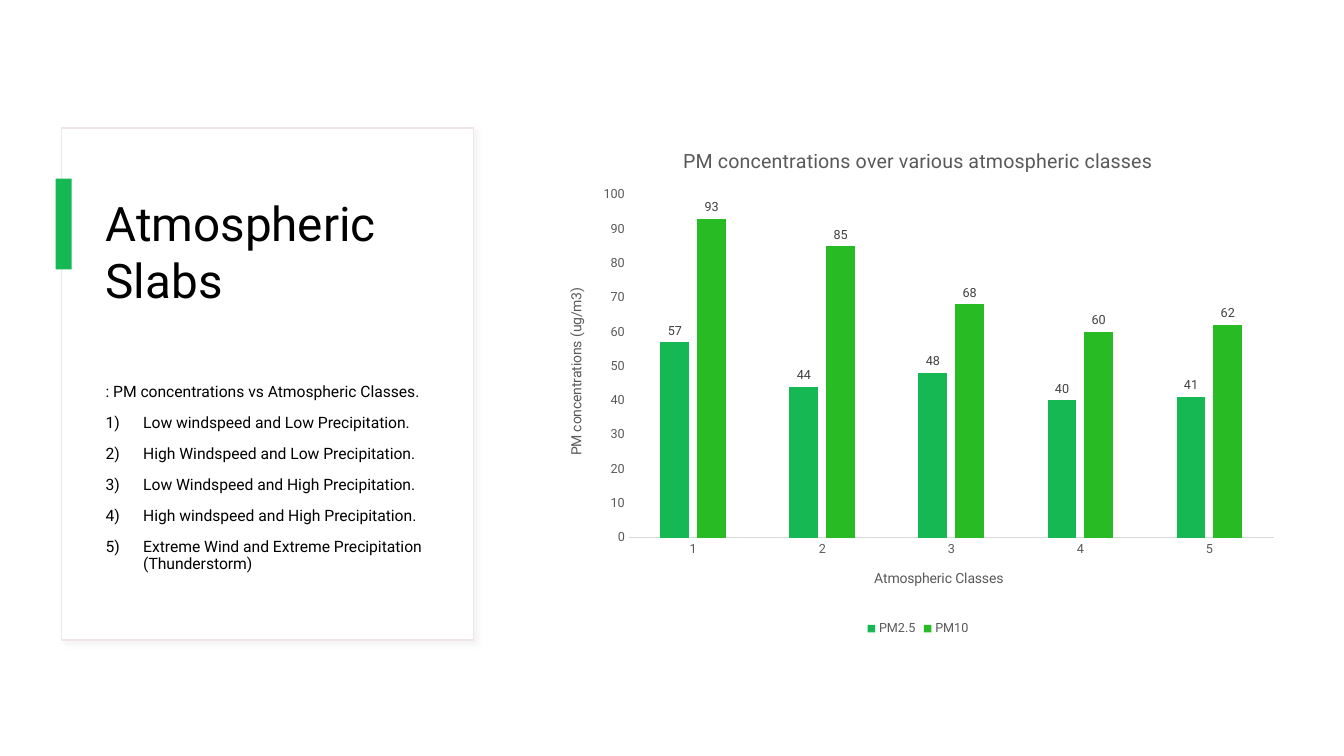
from lxml.etree import SubElement
from pptx import Presentation
from pptx.chart.data import CategoryChartData
from pptx.dml.color import RGBColor
from pptx.enum.chart import (XL_CHART_TYPE as ChartType, XL_LABEL_POSITION as LabelPosition,
                             XL_LEGEND_POSITION as LegendPosition, XL_TICK_MARK as TickMark)
from pptx.enum.shapes import MSO_SHAPE as ShapeKind
from pptx.enum.text import MSO_ANCHOR as Anchor, MSO_AUTO_SIZE as AutoSize, PP_ALIGN as Align
from pptx.oxml import parse_xml
from pptx.oxml.ns import nsdecls, qn
from pptx.util import Cm, Pt

FONT = "Roboto"
BLACK = RGBColor(0x00, 0x00, 0x00)
WHITE = RGBColor(0xFF, 0xFF, 0xFF)
GREEN = RGBColor(0x16, 0xB8, 0x54)
LIGHT_GREEN = RGBColor(0x29, 0xBB, 0x23)
CARD_LINE = RGBColor(0xF0, 0xE5, 0xE5)
AXIS_LINE = RGBColor(0xD9, 0xD9, 0xD9)
CHART_TEXT = RGBColor(0x59, 0x59, 0x59)
LABEL_TEXT = RGBColor(0x40, 0x40, 0x40)

INTRO = ": PM concentrations vs Atmospheric Classes."
CLASSES = [
    "Low windspeed and Low Precipitation.",
    "High Windspeed and Low Precipitation.",
    "Low Windspeed and High Precipitation.",
    "High windspeed and High Precipitation.",
    "Extreme Wind and Extreme Precipitation (Thunderstorm)",
]
SERIES = {
    "PM2.5": ([57, 44, 48, 40, 41], GREEN),
    "PM10": ([93, 85, 68, 60, 62], LIGHT_GREEN),
}
PLOT_LAYOUT = {"x": 0.11, "y": 0.13, "w": 0.87, "h": 0.67}


def apply(target, formats):
    for name, value in formats.items():
        setattr(target, name, value)


def format_font(font, size, color):
    apply(font, {"name": FONT, "size": Pt(size), "bold": False})
    font.color.rgb = color


def place(shape, left, top, width, height):
    apply(shape, {"left": Cm(left), "top": Cm(top), "width": Cm(width), "height": Cm(height)})


def add_box(slide, box, fill, line=None):
    shape = slide.shapes.add_shape(ShapeKind.RECTANGLE, *map(Cm, box))
    shape.shadow.inherit = False
    shape.fill.solid()
    shape.fill.fore_color.rgb = fill
    if line is None:
        shape.line.fill.background()
    else:
        shape.line.color.rgb = line
        shape.line.width = Pt(1)
    return shape


def add_soft_shadow(shape):
    effects = shape._element.spPr.find(qn("a:effectLst"))
    effects.append(parse_xml(
        f'<a:outerShdw {nsdecls("a")} blurRad="{Pt(4)}" dist="{Pt(3)}" dir="2700000" '
        'algn="tl" rotWithShape="0"><a:srgbClr val="D9D9D9"><a:alpha val="30000"/>'
        '</a:srgbClr></a:outerShdw>'))


def format_title(slide):
    title = slide.shapes.title
    place(title, 2.41, 4.75, 8.61, 4.75)
    frame = title.text_frame
    frame.text = "Atmospheric Slabs"
    apply(frame, {"word_wrap": True, "auto_size": AutoSize.NONE, "vertical_anchor": Anchor.TOP})
    paragraph = frame.paragraphs[0]
    paragraph.alignment = Align.LEFT
    format_font(paragraph.runs[0].font, 34, BLACK)
    # Bring the title in front of the card
    slide.shapes._spTree.append(title._element)


def add_class_list(slide):
    frame = slide.shapes.add_textbox(*map(Cm, (2.41, 9.55, 8.61, 5.72))).text_frame
    frame.word_wrap = True
    frame.text = "\n".join([INTRO, *CLASSES])
    for index, paragraph in enumerate(frame.paragraphs):
        apply(paragraph, {"line_spacing": 0.9, "space_before": Pt(10)})
        format_font(paragraph.runs[0].font, 11.2, BLACK)
        if index:
            properties = paragraph._p.get_or_add_pPr()
            properties.set("marL", str(Cm(0.95)))
            properties.set("indent", str(-Cm(0.95)))
            SubElement(properties, qn("a:buAutoNum")).set("type", "arabicParenR")


def set_heading(owner, text, size):
    """Give a chart or an axis its title."""
    heading = owner.chart_title if hasattr(owner, "chart_title") else owner.axis_title
    heading.text_frame.text = text
    format_font(heading.text_frame.paragraphs[0].runs[0].font, size, CHART_TEXT)


def format_axis(axis, text):
    apply(axis, {"has_major_gridlines": False, "major_tick_mark": TickMark.NONE,
                 "minor_tick_mark": TickMark.NONE})
    format_font(axis.tick_labels.font, 9, CHART_TEXT)
    set_heading(axis, text, 10)


def fix_plot_area(chart):
    plot_area = chart._chartSpace.chart.plotArea
    for old in plot_area.findall(qn("c:layout")):
        plot_area.remove(old)
    sizes = "".join(f'<c:{key} val="{value}"/>' for key, value in PLOT_LAYOUT.items())
    plot_area.insert(0, parse_xml(
        f'<c:layout {nsdecls("c")}><c:manualLayout><c:layoutTarget val="inner"/>'
        f'<c:xMode val="edge"/><c:yMode val="edge"/>{sizes}</c:manualLayout></c:layout>'))


def add_concentration_chart(slide):
    data = CategoryChartData()
    data.categories = ["1", "2", "3", "4", "5"]
    for name, (values, _) in SERIES.items():
        data.add_series(name, values)
    chart = slide.shapes.add_chart(
        ChartType.COLUMN_CLUSTERED, *map(Cm, (13.79, 3.23, 18.69, 12.9)), data).chart
    format_font(chart.font, 10, BLACK)
    set_heading(chart, "PM concentrations over various atmospheric classes", 14)

    # Axes
    format_axis(chart.category_axis, "Atmospheric Classes")
    chart.category_axis.format.line.color.rgb = AXIS_LINE
    chart.category_axis.format.line.width = Pt(0.75)
    format_axis(chart.value_axis, "PM concentrations (ug/m3)")
    chart.value_axis.format.line.fill.background()
    apply(chart.value_axis, {"minimum_scale": 0, "maximum_scale": 100, "major_unit": 10})

    # Columns and their labels
    plot = chart.plots[0]
    apply(plot, {"gap_width": 219, "overlap": -27, "vary_by_categories": False})
    for series, (_, color) in zip(plot.series, SERIES.values()):
        series.format.fill.solid()
        series.format.fill.fore_color.rgb = color
        apply(series.data_labels, {"show_value": True, "position": LabelPosition.OUTSIDE_END})
        format_font(series.data_labels.font, 9, LABEL_TEXT)

    # Legend
    chart.has_legend = True
    apply(chart.legend, {"position": LegendPosition.BOTTOM, "include_in_layout": False})
    format_font(chart.legend.font, 9, CHART_TEXT)
    fix_plot_area(chart)


def main():
    presentation = Presentation()
    apply(presentation, {"slide_width": Cm(33.87), "slide_height": Cm(19.05)})
    slide = presentation.slides.add_slide(presentation.slide_layouts[5])

    # Card with its accent bar
    add_soft_shadow(add_box(slide, (1.55, 3.23, 10.39, 12.9), WHITE, CARD_LINE))
    add_box(slide, (1.4, 4.5, 0.41, 2.29), GREEN)

    # Content
    format_title(slide)
    add_concentration_chart(slide)
    add_class_list(slide)
    presentation.save("out.pptx")


if __name__ == "__main__":
    main()
